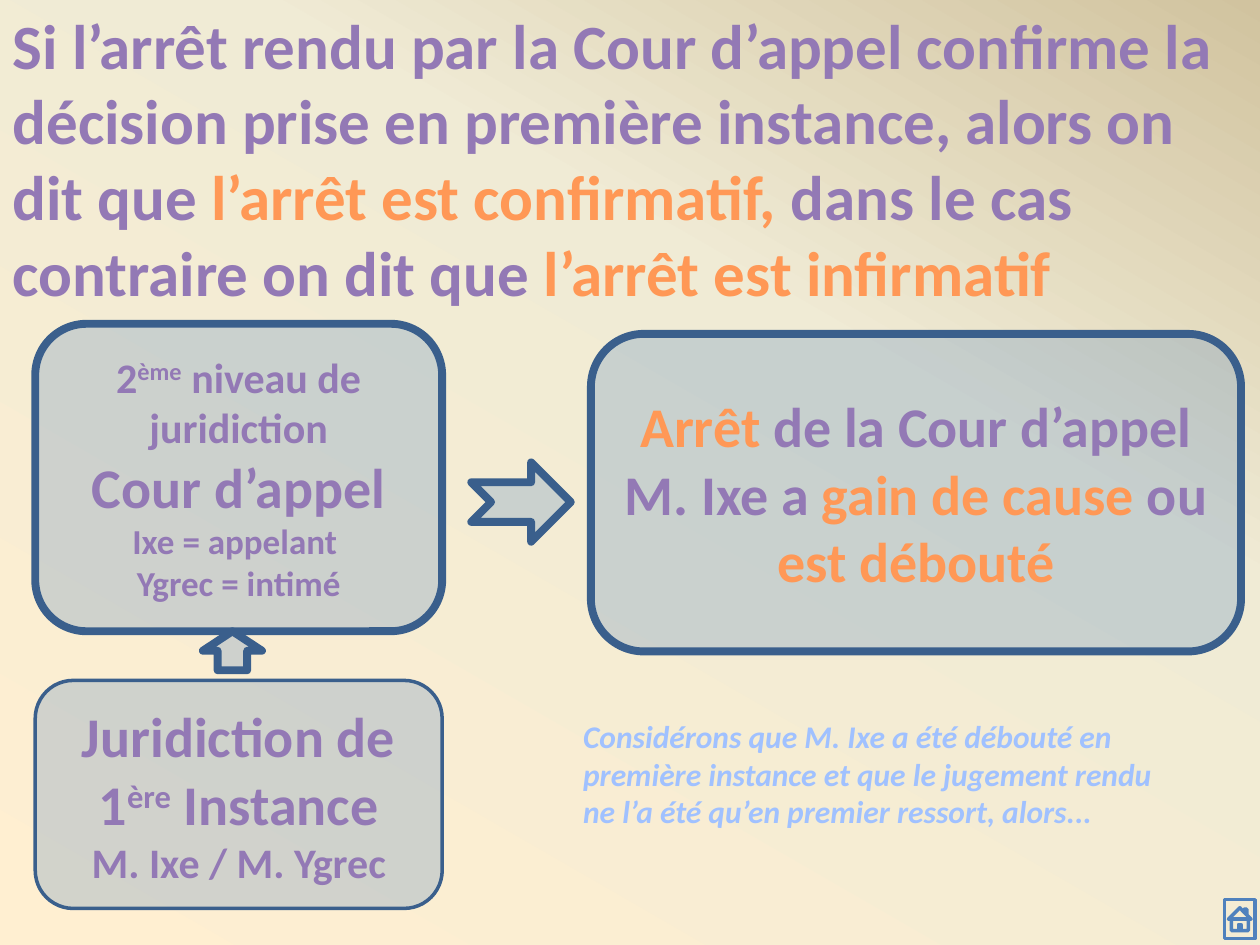
from copy import deepcopy
from dataclasses import dataclass

from lxml.etree import SubElement
from pptx import Presentation
from pptx.dml.color import RGBColor
from pptx.enum.shapes import MSO_SHAPE as Shape
from pptx.enum.text import MSO_ANCHOR as Anchor, MSO_AUTO_SIZE as AutoSize, PP_ALIGN as Align
from pptx.oxml.ns import qn
from pptx.util import Inches, Pt

COLORS = {
    "violet": "9379B5",
    "orange": "FF9856",
    "sky": "A0C1FF",
    "blue": "4F81BD",
    "border": "3A5F8C",
}
BACKGROUND_STOPS = [(0, "FFEFD1"), (0.65, "F0EBD5"), (1, "D1C39F")]
FONT = "Calibri"
BREAK = "\n"


@dataclass
class Span:
    text: str
    size: float
    color: str = "violet"
    raised: bool = False
    italic: bool = False


@dataclass
class Block:
    kind: Shape
    left: float
    top: float
    width: float
    height: float
    line_width: float
    paragraphs: tuple = ()


COLUMN_LEFT, COLUMN_WIDTH = 0.28, 3.23

BLOCKS = [
    Block(Shape.ROUNDED_RECTANGLE, COLUMN_LEFT, 5.4, COLUMN_WIDTH, 1.81, 2, (
        [Span("Juridiction de", 32), Span(BREAK, 32), Span("1", 32),
         Span("ère", 32, raised=True), Span(" Instance", 32), Span(BREAK, 32),
         Span("M. Ixe / M. Ygrec", 24)],
    )),
    Block(Shape.NOTCHED_RIGHT_ARROW, 3.74, 3.67, 0.79, 0.63, 4.5),
    Block(Shape.ROUNDED_RECTANGLE, 4.69, 2.65, 5.16, 2.52, 4.5, (
        [Span("Arrêt ", 32, "orange"), Span("de la Cour d’appel", 32)],
        [Span("M. Ixe a ", 32), Span("gain de cause ", 32, "orange"),
         Span("ou ", 32), Span("est débouté", 32, "orange")],
    )),
    Block(Shape.ROUNDED_RECTANGLE, COLUMN_LEFT, 2.57, COLUMN_WIDTH, 2.44, 4.5, (
        [Span("2", 24), Span("ème", 24, raised=True), Span(" niveau de juridiction", 24)],
        [Span("Cour d’appel", 32)],
        [Span("Ixe = appelant ", 20), Span(BREAK, 20), Span("Ygrec = intimé", 20)],
    )),
    Block(Shape.UP_ARROW, 1.61, 5.01, 0.47, 0.31, 4.5),
]

RULE = [
    Span("Si l’arrêt rendu par la Cour d’appel confirme la décision prise en "
         "première instance, alors on dit que ", 36),
    Span("l’arrêt est confirmatif, ", 36, "orange"),
    Span("dans le cas contraire on dit que ", 36),
    Span("l’arrêt est infirmatif", 36, "orange"),
]
HYPOTHESIS = [
    Span("Considérons que M. Ixe a été débouté en première instance et que le "
         "jugement rendu ne l’a été qu’en premier ressort, alors...", 18, "sky", italic=True),
]


def rgb(name: str) -> RGBColor:
    return RGBColor.from_string(COLORS[name])


def place(shape, left: float, top: float, width: float, height: float) -> None:
    shape.left, shape.top = Inches(left), Inches(top)
    shape.width, shape.height = Inches(width), Inches(height)


def write(frame, paragraphs, alignment: Align, anchor: Anchor) -> None:
    frame.word_wrap = True
    frame.auto_size = AutoSize.NONE
    frame.vertical_anchor = anchor
    for index, spans in enumerate(paragraphs):
        paragraph = frame.add_paragraph() if index else frame.paragraphs[0]
        paragraph.alignment = alignment
        for span in spans:
            if span.text == BREAK:
                paragraph.add_line_break()
                continue
            run = paragraph.add_run()
            run.text = span.text
            font = run.font
            font.name, font.size, font.bold = FONT, Pt(span.size), True
            font.color.rgb = rgb(span.color)
            if span.italic:
                font.italic = True
            if span.raised:
                run._r.get_or_add_rPr().set("baseline", "30000")


def draw_block(slide, block: Block) -> None:
    shape = slide.shapes.add_shape(
        block.kind, Inches(block.left), Inches(block.top),
        Inches(block.width), Inches(block.height))
    shape.shadow.inherit = False
    shape.fill.solid()
    shape.fill.fore_color.rgb = rgb("blue")
    fill_color = shape._element.spPr.find(qn("a:solidFill")).find(qn("a:srgbClr"))
    SubElement(fill_color, qn("a:alpha")).set("val", "25000")
    shape.line.color.rgb = rgb("border")
    shape.line.width = Pt(block.line_width)
    if block.paragraphs:
        write(shape.text_frame, block.paragraphs, Align.CENTER, Anchor.MIDDLE)


def paint_background(slide) -> None:
    fill = slide.background.fill
    fill.gradient()
    fill.gradient_angle = 60
    stop_list = slide._element.find(".//" + qn("a:gsLst"))
    stop_list.append(deepcopy(stop_list[-1]))
    for stop, (position, color) in zip(fill.gradient_stops, BACKGROUND_STOPS):
        stop.position = position
        stop.color.rgb = RGBColor.from_string(color)


def draw_home_button(slide) -> None:
    button = slide.shapes.add_shape(
        Shape.ACTION_BUTTON_HOME, Inches(9.72), Inches(7.14), Inches(0.24), Inches(0.31))
    button.shadow.inherit = False
    button.fill.background()
    button.line.color.rgb = rgb("blue")
    button.line.width = Pt(2)


def main() -> None:
    presentation = Presentation()
    presentation.slide_width, presentation.slide_height = Inches(10), Inches(7.5)
    slide = presentation.slides.add_slide(presentation.slide_layouts[5])
    paint_background(slide)
    draw_home_button(slide)

    title = slide.shapes.title
    place(title, 0, 0, 10, 2.52)
    write(title.text_frame, [RULE], Align.LEFT, Anchor.TOP)

    for block in BLOCKS:
        draw_block(slide, block)

    note = slide.shapes.add_textbox(Inches(4.53), Inches(5.64), Inches(4.8), Inches(1.01))
    write(note.text_frame, [HYPOTHESIS], Align.LEFT, Anchor.TOP)
    presentation.save("out.pptx")


if __name__ == "__main__":
    main()
